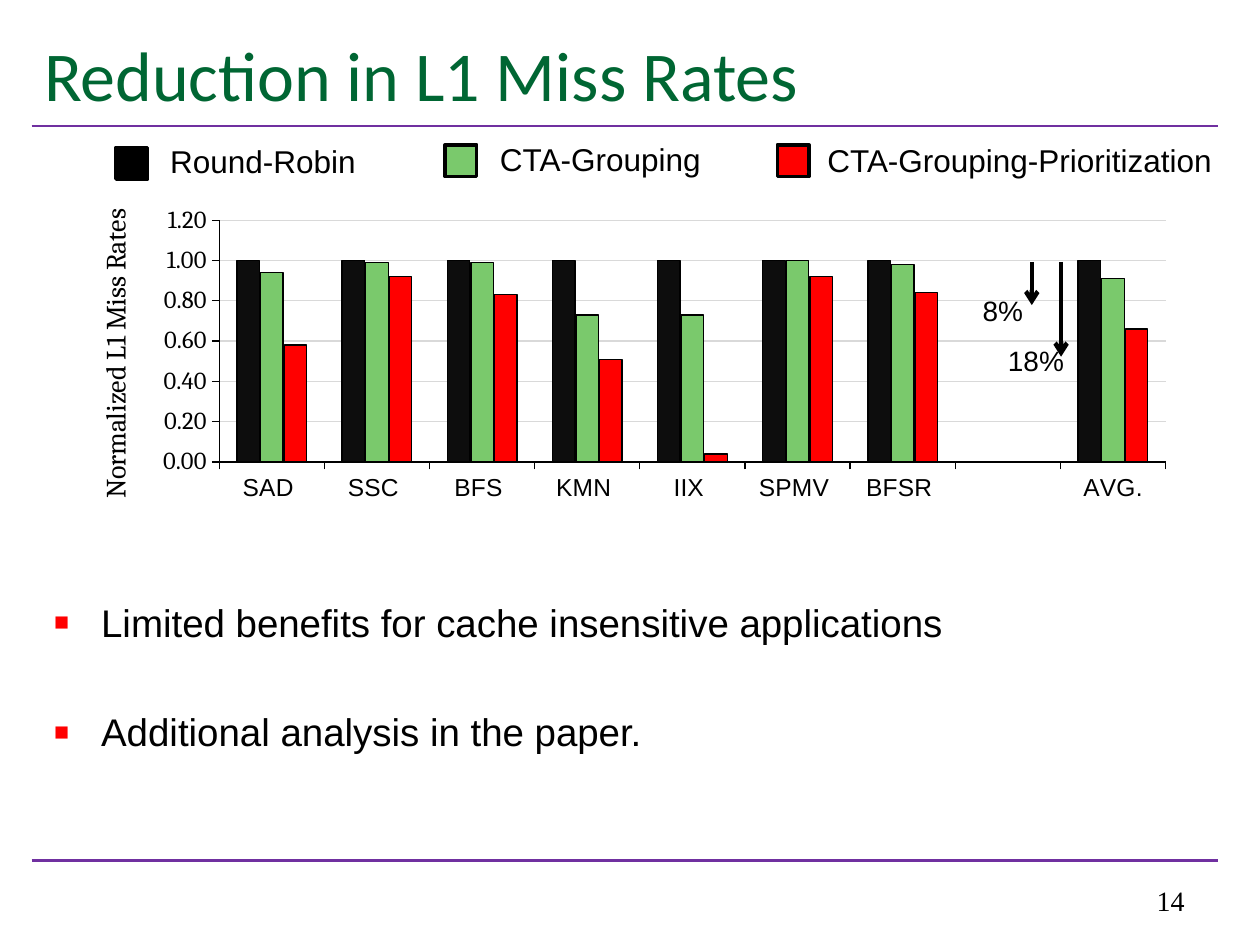
"""Build a slide on L1 miss rates: legend, column chart, reduction arrows and takeaways."""
import pptx
import pptx.chart.data
import pptx.dml.color
import pptx.enum.chart
import pptx.enum.shapes
import pptx.enum.text
import pptx.oxml
import pptx.oxml.ns
import pptx.util

Cm, Pt = pptx.util.Cm, pptx.util.Pt
ALIGN, ANCHOR = pptx.enum.text.PP_ALIGN, pptx.enum.text.MSO_ANCHOR
NS = pptx.oxml.ns.nsdecls("a", "c")

TITLE = "Reduction in L1 Miss Rates"
AXIS_TITLE = "Normalized L1 Miss Rates"
PAGE = "14"
RULES_Y = [2.54, 17.35]
CATEGORIES = ["SAD ", "SSC ", "BFS ", "KMN ", "IIX ", "SPMV ", "BFSR ", "", "AVG."]
SERIES = [
    ("Round-Robin", "0D0D0D", [1, 1, 1, 1, 1, 1, 1, None, 1]),
    ("CTA-Grouping", "7AC96C", [0.94, 0.99, 0.99, 0.73, 0.73, 1, 0.98, None, 0.91]),
    ("CTA-Grouping-Prioritization", "FF0000",
     [0.58, 0.92, 0.83, 0.51, 0.04, 0.92, 0.84, None, 0.66]),
]
LEGEND = [
    ("Round-Robin", "000000", (2.34, 2.97), (3.18, 2.74, 4.65, 1.02)),
    ("CTA-Grouping", "7AC96C", (8.97, 2.92), (9.83, 2.69, 4.65, 1.02)),
    ("CTA-Grouping-Prioritization", "FF0000", (15.67, 2.92), (16.43, 2.72, 8.69, 1.02)),
]
ARROW_TOP = 5.28
REDUCTIONS = [
    ("18%", (20.07, 6.81, 1.7, 0.94), 21.39, 7.19),
    ("8%", (19.56, 5.79, 1.7, 0.94), 20.8, 6.15),
]
BULLETS = [
    "Limited benefits for cache insensitive applications",
    "Additional analysis in the paper.",
]
PLOT = {"x": 0.139, "y": 0.193, "w": 0.842, "h": 0.64}


def rgb(value):
    return pptx.dml.color.RGBColor.from_string(value)


def add_run(p, text, size, font="Arial", color="000000"):
    r = p.add_run()
    r.text = text
    r.font.size, r.font.name = Pt(size), font
    r.font.color.rgb = rgb(color)


def add_box(s, box, anchor=ANCHOR.TOP):
    tf = s.shapes.add_textbox(*map(Cm, box)).text_frame
    tf.word_wrap = True
    tf.vertical_anchor = anchor
    return tf


def add_line(s, x1, y1, x2, y2, color, width, arrow=False):
    line = s.shapes.add_connector(
        pptx.enum.shapes.MSO_CONNECTOR.STRAIGHT, Cm(x1), Cm(y1), Cm(x2), Cm(y2))
    line.line.color.rgb = rgb(color)
    line.line.width = Pt(width)
    if arrow:
        line.line._get_or_add_ln().append(
            pptx.oxml.parse_xml(f'<a:tailEnd {NS} type="arrow"/>'))
    line._element.spPr.append(pptx.oxml.parse_xml(f"<a:effectLst {NS}/>"))


def set_line(fmt, color):
    fmt.line.color.rgb = rgb(color)
    fmt.line.width = Pt(0.75)


def add_chart(s):
    data = pptx.chart.data.CategoryChartData(number_format="0.00")
    data.categories = CATEGORIES
    for name, _, values in SERIES:
        data.add_series(name, values)
    chart = s.shapes.add_chart(
        pptx.enum.chart.XL_CHART_TYPE.COLUMN_CLUSTERED,
        Cm(1.27), Cm(2.97), Cm(22.66), Cm(7.62), data).chart
    chart.has_legend = chart.has_title = False
    chart.font.size, chart.font.name = Pt(14), "Cambria"
    chart.font.color.rgb = rgb("000000")
    plot = chart.plots[0]
    plot.vary_by_categories = False
    plot.gap_width, plot.overlap = 158, -5
    for series, (_, color, _) in zip(plot.series, SERIES):
        series.invert_if_negative = False
        series.format.fill.solid()
        series.format.fill.fore_color.rgb = rgb(color)
        set_line(series.format, "000000")
    cat, val = chart.category_axis, chart.value_axis
    for axis in (cat, val):
        axis.major_tick_mark = pptx.enum.chart.XL_TICK_MARK.OUTSIDE
        axis.minor_tick_mark = pptx.enum.chart.XL_TICK_MARK.NONE
        axis.tick_labels.font.size = Pt(14)
        set_line(axis.format, "000000")
    cat.tick_labels.font.name = "Arial"
    val.minimum_scale, val.maximum_scale, val.major_unit = 0, 1.2, 0.2
    val.tick_labels.number_format = "0.00"
    val.tick_labels.number_format_is_linked = False
    val.has_major_gridlines = True
    set_line(val.major_gridlines.format, "D9D9D9")
    add_run(val.axis_title.text_frame.paragraphs[0], AXIS_TITLE, 16, "Cambria")
    val.axis_title.text_frame.paragraphs[0].runs[0].font.bold = False
    area = chart._chartSpace.chart.plotArea
    for old in area.findall(pptx.oxml.ns.qn("c:layout")):
        area.remove(old)
    sides = "".join(f'<c:{k} val="{v}"/>' for k, v in PLOT.items())
    area.insert(0, pptx.oxml.parse_xml(
        f'<c:layout {NS}><c:manualLayout><c:layoutTarget val="inner"/>'
        f'<c:xMode val="edge"/><c:yMode val="edge"/>{sides}</c:manualLayout></c:layout>'))


def add_legend(s):
    for name, color, (x, y), box in LEGEND:
        sp = s.shapes.add_shape(pptx.enum.shapes.MSO_SHAPE.RECTANGLE,
                                Cm(x), Cm(y), Cm(0.64), Cm(0.64))
        sp.shadow.inherit = False
        sp.fill.solid()
        sp.fill.fore_color.rgb = rgb(color)
        sp.line.color.rgb = rgb("000000")
        sp.line.width = Pt(2)
        add_run(add_box(s, box).paragraphs[0], name, 18)


def add_bullets(s):
    tf = add_box(s, (0.84, 10.8, 23.93, 5.72))
    tf.margin_top = Cm(1.28)
    for i, text in enumerate(BULLETS):
        p = tf.add_paragraph() if i else tf.paragraphs[0]
        p.space_before = Pt(36 if i else 0)
        pPr = p._p.get_or_add_pPr()
        pPr.set("marL", str(Cm(0.95)))
        pPr.set("indent", str(-Cm(0.95)))
        for xml in (f'<a:buClr {NS}><a:srgbClr val="FF0000"/></a:buClr>',
                    f'<a:buSzPct {NS} val="65000"/>',
                    f'<a:buFont {NS} typeface="Arial"/>',
                    f'<a:buChar {NS} char="■"/>'):
            pPr.append(pptx.oxml.parse_xml(xml))
        add_run(p, text, 22)


def main():
    prs = pptx.Presentation()
    prs.slide_width, prs.slide_height = Cm(25.4), Cm(19.05)
    s = prs.slides.add_slide(prs.slide_layouts[6])
    for y in RULES_Y:
        add_line(s, 0.64, y, 24.56, y, "7030A0", 1.5)
    tf = add_box(s, (0.64, 0.43, 23.93, 2.11), ANCHOR.MIDDLE)
    add_run(tf.paragraphs[0], TITLE, 40, "Calibri", "006633")
    p = add_box(s, (18.21, 17.35, 5.92, 1.27), ANCHOR.BOTTOM).paragraphs[0]
    p.alignment = ALIGN.RIGHT
    add_run(p, PAGE, 16, "Times New Roman")
    add_bullets(s)
    add_chart(s)
    for text, box, x, bottom in REDUCTIONS:
        add_line(s, x, ARROW_TOP, x, bottom, "000000", 2.5, arrow=True)
        add_run(add_box(s, box).paragraphs[0], text, 16)
    add_legend(s)
    prs.save("out.pptx")


if __name__ == "__main__":
    main()
